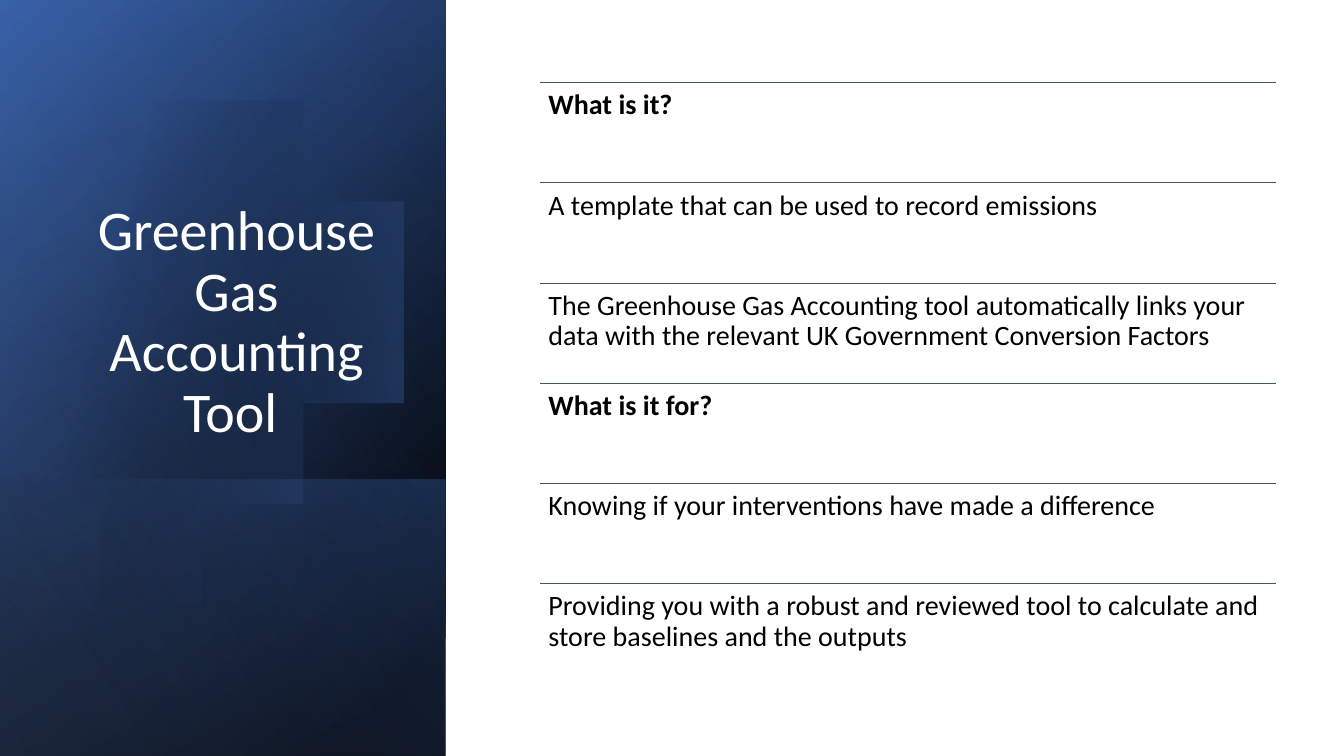
from lxml.etree import SubElement
from pptx import Presentation
from pptx.dml.color import RGBColor
from pptx.enum.shapes import MSO_CONNECTOR, MSO_SHAPE
from pptx.enum.text import MSO_ANCHOR, MSO_AUTO_SIZE, PP_ALIGN
from pptx.oxml.ns import qn
from pptx.util import Inches, Pt

TITLE = "Greenhouse Gas Accounting Tool "
ROWS = [  # text, is heading
    ("What is it?", True),
    ("A template that can be used to record emissions", False),
    ("The Greenhouse Gas Accounting tool automatically links your data "
     "with the relevant UK Government Conversion Factors", False),
    ("What is it for?", True),
    ("Knowing if your interventions have made a difference", False),
    ("Providing you with a robust and reviewed tool to calculate "
     "and store baselines and the outputs", False),
]
COLORS = {"black": "000000", "white": "FFFFFF", "navy": "2F5597",
          "blue": "4472C4", "pale": "8FAADC", "rule": "44546A"}
FONT = "Calibri"
SLIDE_WIDTH, SLIDE_HEIGHT = 13.33, 7.5
PANEL_WIDTH = 4.42

# Gradients: two stops of (position %, colour, opacity %), then clockwise angle
BASE = ((8, "black", 100), (100, "navy", 100), 50)
GLOW = ((0, "black", 0), (99, "blue", 46), 30)
FOOT = ((2, "blue", 29), (100, "black", 30), 130)
DISC = ((29, "black", 0), (100, "blue", 43), 14)
SHEEN = ((0, "black", 0), (99, "pale", 11), 120)

# Disc outline: a start point, then cubic curves (three points) or lines (one)
DISC_START = (1.49, 1.1)
DISC_SEGMENTS = [
    [(2.46, 1.12), (3.35, 1.77), (3.63, 2.75)],
    [(3.98, 3.97), (3.28, 5.23), (2.07, 5.58)],
    [(1.31, 5.8), (0.53, 5.61), (-0.03, 5.14)],
    [(-0.15, 5.03)],
    [(-0.15, 1.75)],
    [(0, 1.61)],
    [(0.23, 1.42), (0.5, 1.28), (0.8, 1.19)],
    [(1.03, 1.13), (1.26, 1.1), (1.49, 1.1)],
]
CURVE_STEPS = 20

LIST_LEFT, LIST_WIDTH = 5.36, 7.3
FIRST_TOP, LAST_TOP = 0.82, 5.79


def color(name):
    return RGBColor.from_string(COLORS[name])


def fill_gradient(shape, gradient):
    *stops, angle = gradient
    shape.shadow.inherit = False
    shape.line.fill.background()
    shape.fill.gradient()
    shape.fill.gradient_angle = 360 - angle
    for stop, (position, name, opacity) in zip(shape.fill.gradient_stops, stops):
        stop.position = position / 100
        stop.color.rgb = color(name)
    tags = shape.element.spPr.iter(qn("a:srgbClr"))
    for tag, (_, _, opacity) in zip(tags, stops):
        if opacity < 100:
            SubElement(tag, qn("a:alpha")).set("val", str(opacity * 1000))


def add_panel(page, top, height, gradient):
    """Add a left panel as a mirrored rectangle turned by 90 degrees."""
    offset = (height - PANEL_WIDTH) / 2
    panel = page.shapes.add_shape(
        MSO_SHAPE.RECTANGLE, Inches(-offset), Inches(top + offset),
        Inches(height), Inches(PANEL_WIDTH))
    panel.rotation = 90
    panel.element.spPr.xfrm.set("flipH", "1")
    fill_gradient(panel, gradient)


def outline_points(start, segments):
    """Return the outline's points, with each curve cut into short lines."""
    points = []
    for segment in segments:
        if len(segment) == 1:
            points.append(segment[0])
        else:
            corners = list(zip(start, *segment))
            for step in range(1, CURVE_STEPS + 1):
                t = step / CURVE_STEPS
                u = 1 - t
                points.append(tuple(
                    a * u**3 + 3 * b * u * u * t + 3 * c * u * t * t + d * t**3
                    for a, b, c, d in corners))
        start = segment[-1]
    return points


def add_disc(page):
    builder = page.shapes.build_freeform(*DISC_START, scale=Inches(1))
    builder.add_line_segments(outline_points(DISC_START, DISC_SEGMENTS), close=True)
    fill_gradient(builder.convert_to_shape(), DISC)


def format_text(frame, size, name, bold=False):
    frame.word_wrap = True
    frame.auto_size = MSO_AUTO_SIZE.NONE
    para = frame.paragraphs[0]
    para.line_spacing = 0.9
    font = para.runs[0].font
    font.name, font.size, font.bold = FONT, Pt(size), bold
    font.color.rgb = color(name)


def add_title(page):
    title = page.shapes.title
    title.left, title.top = Inches(0.64), Inches(1.84)
    title.width, title.height = Inches(3.41), Inches(2.62)
    frame = title.text_frame
    frame.text = TITLE
    frame.vertical_anchor = MSO_ANCHOR.BOTTOM
    frame.paragraphs[0].alignment = PP_ALIGN.CENTER
    format_text(frame, 40, "white")
    page.shapes.element.append(title.element)  # in front of the panels


def add_row(page, top, height, text, heading):
    left, width = Inches(LIST_LEFT), Inches(LIST_WIDTH)
    rule = page.shapes.add_connector(
        MSO_CONNECTOR.STRAIGHT, left, Inches(top), left + width, Inches(top))
    rule.line.color.rgb = color("rule")
    rule.line.width = Pt(0.5)
    SubElement(rule.element.spPr, qn("a:effectLst"))

    box = page.shapes.add_textbox(left, Inches(top), width, Inches(height))
    frame = box.text_frame
    frame.text = text
    frame.margin_left = frame.margin_right = Inches(0.08)
    frame.margin_top = frame.margin_bottom = Inches(0.08)
    frame.vertical_anchor = MSO_ANCHOR.TOP
    format_text(frame, 20, "black", heading)


def main():
    deck = Presentation()
    deck.slide_width, deck.slide_height = Inches(SLIDE_WIDTH), Inches(SLIDE_HEIGHT)
    page = deck.slides.add_slide(deck.slide_layouts[5])

    add_panel(page, 0, SLIDE_HEIGHT, BASE)
    add_panel(page, 0, SLIDE_HEIGHT, GLOW)
    add_panel(page, 4.76, 2.74, FOOT)
    add_disc(page)
    add_panel(page, 0, SLIDE_HEIGHT, SHEEN)
    add_title(page)

    row_height = (LAST_TOP - FIRST_TOP) / (len(ROWS) - 1)
    for index, (text, heading) in enumerate(ROWS):
        add_row(page, FIRST_TOP + index * row_height, row_height, text, heading)
    deck.save("out.pptx")


if __name__ == "__main__":
    main()
